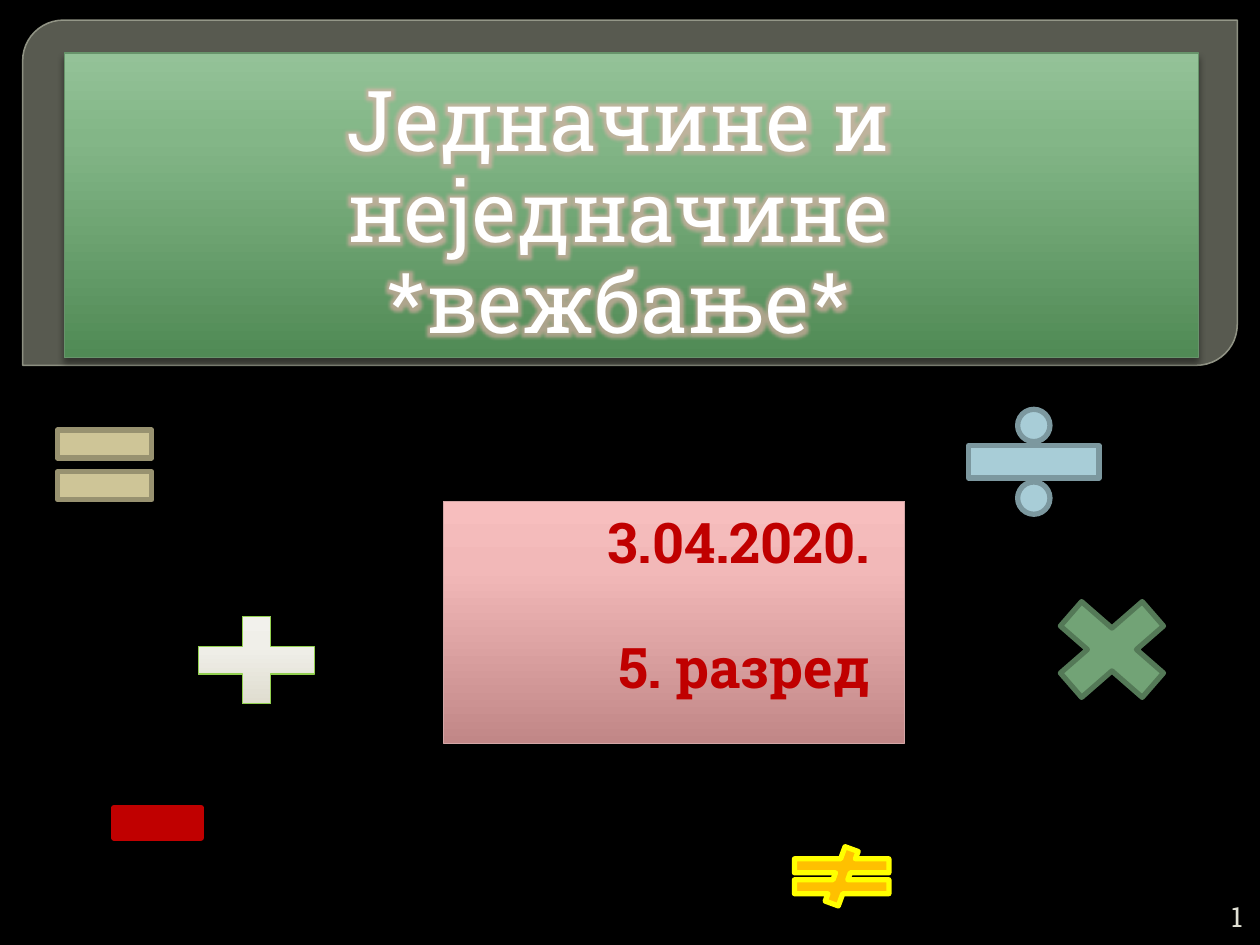
from lxml import etree
from pptx import Presentation
from pptx.dml.color import RGBColor
from pptx.enum.shapes import MSO_SHAPE
from pptx.enum.text import MSO_ANCHOR, MSO_AUTO_SIZE, PP_ALIGN
from pptx.oxml.ns import qn
from pptx.util import Inches, Pt

RECT, PANEL = MSO_SHAPE.RECTANGLE, MSO_SHAPE.ROUND_2_DIAG_RECTANGLE
TOP, MIDDLE, BOTTOM = MSO_ANCHOR.TOP, MSO_ANCHOR.MIDDLE, MSO_ANCHOR.BOTTOM
CENTER, RIGHT = PP_ALIGN.CENTER, PP_ALIGN.RIGHT
NO_FIT = MSO_AUTO_SIZE.NONE

FONT = "Roboto Slab"
BLACK = RGBColor(0x00, 0x00, 0x00)
WHITE = RGBColor(0xFF, 0xFF, 0xFF)
RED = RGBColor(0xC0, 0x00, 0x00)
PALE = RGBColor(0xE0, 0xE0, 0xD4)
GLOW = RGBColor(0xE6, 0xB1, 0xAB)
PANEL_FILL = RGBColor(0x88, 0x8B, 0x7B)
PANEL_LINE = RGBColor(0x9D, 0xA0, 0x90)
GREEN_LINE = RGBColor(0x67, 0x94, 0x6B)
PINK_LINE = RGBColor(0xD3, 0xA6, 0xA6)
LIME = RGBColor(0x92, 0xD0, 0x50)
GREEN_STOPS = [(0, "508A55"), (72, "83B687"), (100, "94C298")]
PINK_STOPS = [(0, "C18787"), (72, "F2B8B8"), (100, "F7BEBE")]
CREAM_STOPS = [(0, "DAD7C7"), (62, "F0EFE9"), (100, "F4F3EF")]

TITLE = ["Једначине и неједначине", "*вежбање*"]
DETAILS = ["3.04.2020.", "5. разред"]
SIGNS = [
    (MSO_SHAPE.MATH_MULTIPLY, (8.2, 4.61, 1.25, 1.09),
     RGBColor(0x72, 0xA3, 0x76), RGBColor(0x54, 0x79, 0x57)),
    (MSO_SHAPE.MATH_DIVIDE, (7.5, 3.12, 1.41, 1.09),
     RGBColor(0xA8, 0xCD, 0xD7), RGBColor(0x7C, 0x98, 0x9F)),
    (MSO_SHAPE.MATH_MINUS, (0.78, 6.02, 0.94, 1.02), RED, RED),
    (MSO_SHAPE.MATH_EQUAL, (0.32, 3.22, 1.02, 0.94),
     RGBColor(0xCE, 0xC5, 0x97), RGBColor(0x98, 0x92, 0x70)),
    (MSO_SHAPE.MATH_NOT_EQUAL, (6.17, 6.72, 1.02, 0.47),
     RGBColor(0xFF, 0xC0, 0x00), RGBColor(0xFF, 0xFF, 0x00)),
]


def add_node(parent, tag, **attrs):
    return etree.SubElement(parent, qn(tag), {k: str(v) for k, v in attrs.items()})


def add_alpha(color, percent):
    add_node(color, "a:alpha", val=percent * 1000)


def set_line(sp, color, width):
    sp.line.color.rgb = color
    sp.line.width = Pt(width)


def add_shape(s, kind, box, line, width, fill=None):
    sp = s.shapes.add_shape(kind, *map(Inches, box))
    sp.shadow.inherit = False
    if fill is not None:
        sp.fill.solid()
        sp.fill.fore_color.rgb = fill
    set_line(sp, line, width)
    return sp


def set_gloss(sp, stops):
    sp.fill.gradient()
    sp.fill.gradient_angle = 90
    spPr = sp._element.spPr
    gs_list = spPr.find(".//" + qn("a:gsLst"))
    for gs in list(gs_list):
        gs_list.remove(gs)
    for pos, color in stops:
        add_node(add_node(gs_list, "a:gs", pos=pos * 1000), "a:srgbClr", val=color)
    sp.shadow.inherit = False
    shadow = add_node(spPr.find(qn("a:effectLst")), "a:outerShdw", blurRad=Pt(4),
                      dist=Pt(3), dir=90 * 60000, algn="ctr", rotWithShape=0)
    add_alpha(add_node(shadow, "a:srgbClr", val=BLACK), 43)


def set_frame(tf, anchor, right=0.1, side=0.1):
    tf.word_wrap = True
    tf.auto_size = NO_FIT
    tf.vertical_anchor = anchor
    tf.margin_left, tf.margin_right = Inches(side), Inches(right)
    tf.margin_top = tf.margin_bottom = Inches(0.05)


def add_run(p, text, size, color, bold=False):
    r = p.add_run()
    r.text = text
    r.font.name, r.font.size, r.font.bold = FONT, Pt(size), bold
    r.font.color.rgb = color
    return r


def add_glow(r):
    rPr = r.font._element
    effects = etree.Element(qn("a:effectLst"))
    glow = add_node(effects, "a:glow", rad=Pt(8))
    add_alpha(add_node(glow, "a:srgbClr", val=GLOW), 60)
    rPr.find(qn("a:solidFill")).addnext(effects)


def main():
    prs = Presentation()
    prs.slide_width, prs.slide_height = Inches(10), Inches(7.5)
    s = prs.slides.add_slide(prs.slide_layouts[5])
    s.background.fill.solid()
    s.background.fill.fore_color.rgb = BLACK

    panel = add_shape(s, PANEL, (0.18, 0.16, 9.64, 2.74), PANEL_LINE, 0.87, PANEL_FILL)
    panel.adjustments[0], panel.adjustments[1] = 0.118, 0
    for color, percent in zip(panel._element.spPr.iter(qn("a:srgbClr")), (65, 88)):
        add_alpha(color, percent)
    s.shapes._spTree.insert(2, panel._element)

    title = s.shapes.title
    title.left, title.top, title.width, title.height = map(Inches, (0.51, 0.42, 9, 2.42))
    set_gloss(title, GREEN_STOPS)
    set_line(title, GREEN_LINE, 0.75)
    set_frame(title.text_frame, BOTTOM, right=0.25, side=0.05)
    p = title.text_frame.paragraphs[0]
    p.alignment, p.line_spacing = CENTER, 0.9
    for i, text in enumerate(TITLE):
        if i:
            p.add_line_break()
        add_glow(add_run(p, text, 48, WHITE))

    card = add_shape(s, RECT, (3.52, 3.98, 3.66, 1.92), PINK_LINE, 0.75)
    set_gloss(card, PINK_STOPS)
    tf = card.text_frame
    set_frame(tf, TOP, right=0.27, side=0.05)
    for i, text in enumerate(DETAILS):
        p = tf.add_paragraph() if i else tf.paragraphs[0]
        p.alignment = RIGHT
        p.space_before = Pt(33 if i else 0)
        add_run(p, text, 32, RED, True)

    plus = add_shape(s, MSO_SHAPE.MATH_PLUS, (1.41, 4.77, 1.25, 0.94), LIME, 0.75)
    set_gloss(plus, CREAM_STOPS)
    for kind, box, fill, line in SIGNS:
        add_shape(s, kind, box, line, 3, fill)

    number = s.shapes.add_textbox(*map(Inches, (9.45, 7.12, 0.51, 0.3)))
    set_frame(number.text_frame, MIDDLE)
    p = number.text_frame.paragraphs[0]
    p.alignment = RIGHT
    add_run(p, "1", 16, PALE)

    prs.save("out.pptx")


if __name__ == "__main__":
    main()
